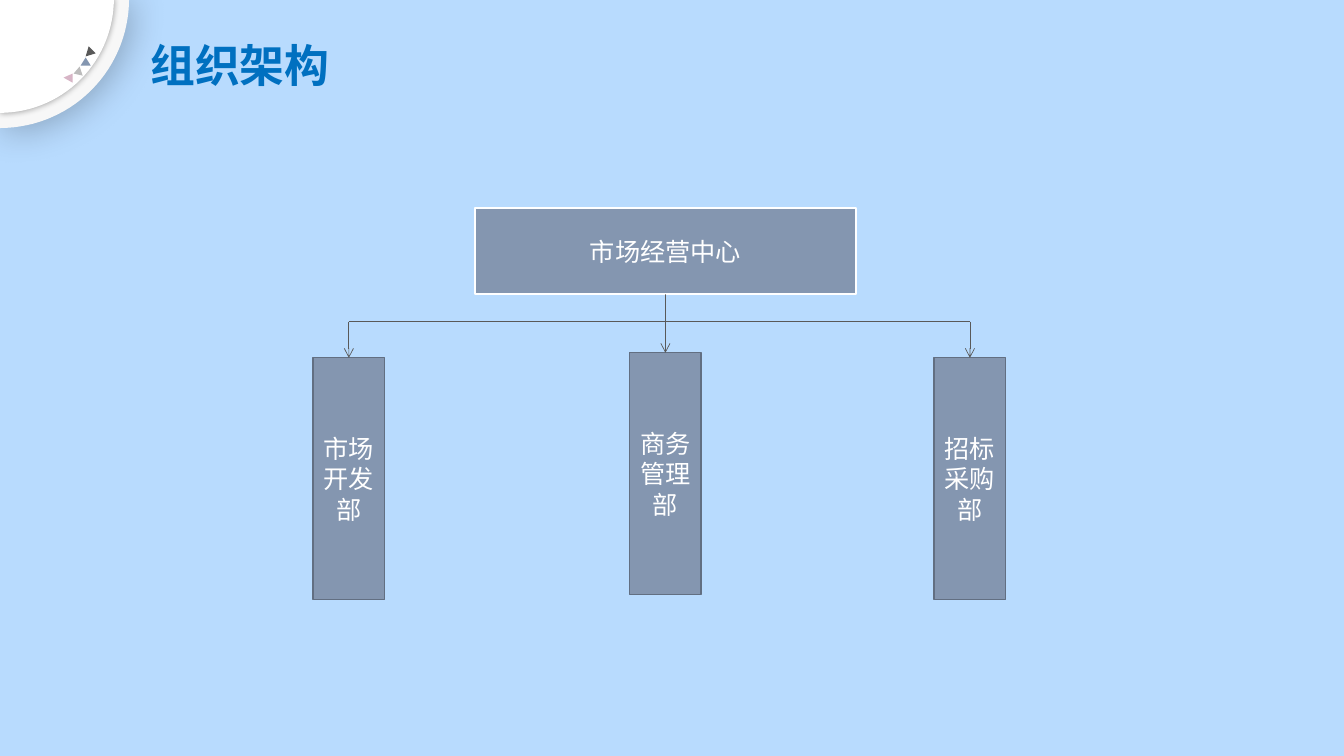
import math

from lxml import etree
from pptx import Presentation
from pptx import util as u
from pptx.dml.color import RGBColor
from pptx.enum import shapes, text
from pptx.oxml.ns import qn

TITLE = "组织架构"
ROOT = ("市场经营中心", 6.6, 2.06, 3.78, 0.86)  # text, centre x, top, width, height
DEPARTMENTS = [("市场开发部", 3.46, 3.55), ("商务管理部", 6.6, 3.5), ("招标采购部", 9.62, 3.55)]
DEPARTMENT_SIZE = (0.71, 2.4)
BUS_Y = 3.19
# radius, fill, shadow (opacity %, blur pt, distance pt, angle)
CORNER_DISCS = [(1.28, "F7F7F7", (25, 26, 3, 45)), (1.13, "FFFFFF", (40, 5, 0, 0))]
TRIANGLES = [
    ("595959", [(0.95, 0.53), (0.85, 0.56), (0.88, 0.46)]),
    ("8496B0", [(0.9, 0.65), (0.8, 0.65), (0.85, 0.57)]),
    ("BCBCBC", [(0.82, 0.75), (0.73, 0.73), (0.79, 0.66)]),
    ("D7B5C6", [(0.72, 0.82), (0.63, 0.77), (0.72, 0.73)]),
]
BOX_FILL, LINE = "8496B0", "595959"
BOX_FONT = {"name": "Arial", "size": u.Pt(18), "bold": False}
TITLE_FONT = {"name": "Noto Sans CJK SC", "size": u.Pt(32), "bold": True}


def paint(color_format, value):
    color_format.rgb = RGBColor.from_string(value)


def fill(shape, value):
    shape.fill.solid()
    paint(shape.fill.fore_color, value)
    shape.shadow.inherit = False


def write(shape, words, font, color, align):
    frame = shape.text_frame
    frame.word_wrap = True
    frame.auto_size = text.MSO_AUTO_SIZE.NONE
    frame.vertical_anchor = text.MSO_ANCHOR.MIDDLE
    para = frame.paragraphs[0]
    para.alignment = align
    span = para.add_run()
    span.text = words
    for name, value in font.items():
        setattr(span.font, name, value)
    paint(span.font.color, color)
    return para, span


def add_polygon(page, points, color):
    corners = [(u.Inches(x), u.Inches(y)) for x, y in points]
    builder = page.shapes.build_freeform(*corners[0])
    builder.add_line_segments(corners[1:], close=True)
    shape = builder.convert_to_shape()
    fill(shape, color)
    shape.line.fill.background()
    return shape


def add_shadow(shape, opacity, blur, distance, angle):
    effects = shape.element.spPr.find(qn("a:effectLst"))
    shadow = etree.SubElement(
        effects, qn("a:outerShdw"), blurRad=str(u.Pt(blur)), dist=str(u.Pt(distance)),
        dir=str(angle * 60000), algn="tl", rotWithShape="0")
    color = etree.SubElement(shadow, qn("a:srgbClr"), val="000000")
    etree.SubElement(color, qn("a:alpha"), val=str(opacity * 1000))


def add_box(page, words, center, top, width, height, edge, weight):
    box = page.shapes.add_shape(
        shapes.MSO_SHAPE.RECTANGLE,
        *map(u.Inches, (center - width / 2, top, width, height)))
    fill(box, BOX_FILL)
    paint(box.line.color, edge)
    box.line.width = u.Pt(weight)
    write(box, words, BOX_FONT, "FFFFFF", text.PP_ALIGN.CENTER)
    return box


def add_line(page, start, end, arrow=False):
    line = page.shapes.add_connector(
        shapes.MSO_CONNECTOR.STRAIGHT, *map(u.Inches, start + end))
    paint(line.line.color, LINE)
    line.line.width = u.Pt(0.5)
    if arrow:
        etree.SubElement(line.line._get_or_add_ln(), qn("a:tailEnd"), type="arrow")
    etree.SubElement(line.element.spPr, qn("a:effectLst"))
    return line


def main():
    deck = Presentation()
    deck.slide_width, deck.slide_height = u.Inches(13.33), u.Inches(7.5)
    page = deck.slides.add_slide(deck.slide_layouts[5])
    page.background.fill.solid()
    paint(page.background.fill.fore_color, "B8DBFE")

    for radius, color, shadow in CORNER_DISCS:
        angles = [math.radians(degree) for degree in range(0, 91, 3)]
        arc = [(radius * math.cos(a), radius * math.sin(a) - 0.01) for a in angles]
        add_shadow(add_polygon(page, [(0, -0.01)] + arc, color), *shadow)
    for color, points in TRIANGLES:
        add_polygon(page, points, color)

    title = page.shapes.title
    title.left, title.top, title.width, title.height = map(u.Inches, (1.39, 0.3, 10.69, 0.57))
    para, span = write(title, TITLE, TITLE_FONT, "0070C0", text.PP_ALIGN.LEFT)
    para.line_spacing = 1.2
    etree.SubElement(span.font._element, qn("a:ea"), typeface=TITLE_FONT["name"])

    root = add_box(page, *ROOT, "FFFFFF", 1.5)
    root_bottom = ROOT[2] + ROOT[4]
    add_line(page, (DEPARTMENTS[0][1], BUS_Y), (DEPARTMENTS[-1][1], BUS_Y))
    for words, center, top in DEPARTMENTS:
        box = add_box(page, words, center, top, *DEPARTMENT_SIZE, "626F82", 1)
        under_root = center == ROOT[1]
        start_y = root_bottom if under_root else BUS_Y
        arrow = add_line(page, (center, start_y), (center, top), arrow=True)
        if under_root:
            arrow.begin_connect(root, 2)
        arrow.end_connect(box, 0)

    deck.save("out.pptx")


if __name__ == "__main__":
    main()
